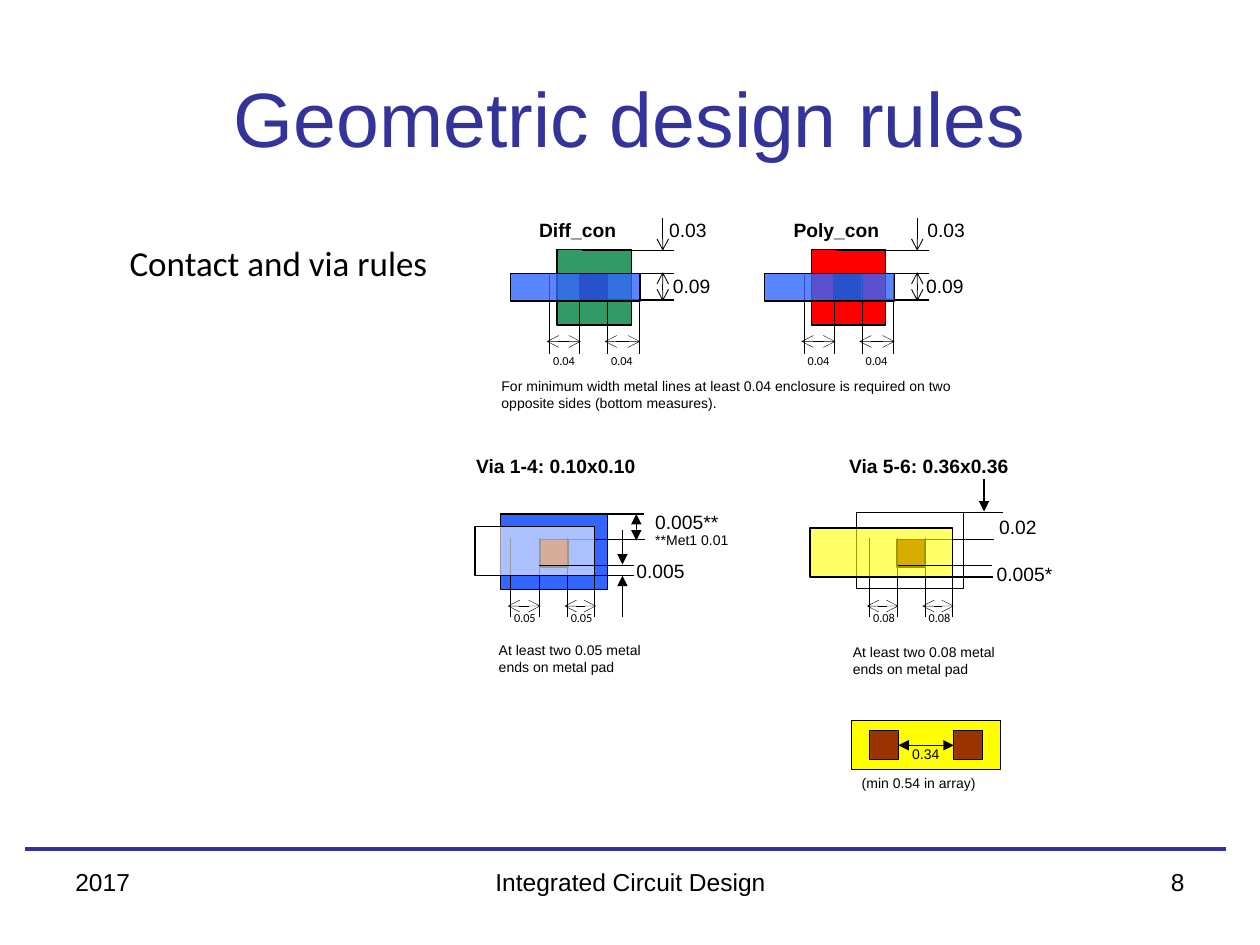
"""Build a slide on the geometric design rules for contacts and vias."""
from lxml.etree import SubElement
from pptx import Presentation
from pptx.dml.color import RGBColor
from pptx.enum.shapes import MSO_CONNECTOR as Connector, MSO_SHAPE as Shape
from pptx.enum.text import MSO_ANCHOR as Anchor, PP_ALIGN as Align
from pptx.oxml.ns import qn
from pptx.util import Inches, Pt

COLORS = {
    "black": "000000", "white": "FFFFFF", "navy": "333399", "green": "339966",
    "red": "FF0000", "blue": "3366FF", "yellow": "FFFF00", "brown": "993300",
}
DEFAULT, NARROW, TINY, FLUSH = (0.1, 0.05), (0.02, 0.05), (0.02, 0.01), (0, 0.05)

FRAME_TEXTS = [
    ("2017", (0.5, 6.83, 2.33, 0.52), Align.LEFT),
    ("Integrated Circuit Design", (3.42, 6.83, 3.17, 0.52), Align.CENTER),
    ("8", (7.17, 6.83, 2.33, 0.52), Align.RIGHT),
]
CONTACTS = [
    {"name": "Diff_con", "left": 4.42, "fill": "green", "outer_label": 5.29, "inner_label": 5.32},
    {"name": "Poly_con", "left": 6.44, "fill": "red", "outer_label": 7.34, "inner_label": 7.33},
]
CONTACT_NOTE = ("For minimum width metal lines at least 0.04 enclosure is required "
                "on two opposite sides (bottom measures).")
VIAS = [
    {"title": "Via 1-4: 0.10x0.10", "title_box": (3.68, 3.56, 1.63, 0.42),
     "pad": (3.97, 4.08, 0.85, 0.6), "pad_fill": "blue",
     "metal": (3.77, 4.18, 0.95, 0.39), "metal_fill": "white",
     "cut": 4.29, "ticks": (4.05, 4.28, 4.5, 4.72), "enclosure": "0.05",
     "top_lines": [(4.36, 4.08, 5.11), (4.38, 4.28, 5.12)],
     "low_lines": [(4.28, 4.49, 5.03), (4.28, 4.57, 5.03)], "low_width": 0.5,
     "labels": [(["0.005**"], (5.18, 4, 0.8, 0.3), 11, NARROW),
                (["**Met1 0.01"], (5.18, 4.17, 0.8, 0.3), 8, NARROW),
                (["0.005"], (5.03, 4.43, 0.48, 0.37), 11, TINY)],
     "arrows": [((5.05, 4.08), (5.05, 4.29), True), ((4.94, 4.9), (4.94, 4.57), False),
                ((4.94, 4.21), (4.94, 4.48), False)],
     "note_box": (3.86, 5.04, 1.68, 0.51)},
    {"title": "Via 5-6: 0.36x0.36", "title_box": (6.64, 3.56, 1.63, 0.42),
     "pad": (6.8, 4.07, 0.85, 0.6), "pad_fill": "white",
     "metal": (6.43, 4.19, 1.13, 0.39), "metal_fill": "yellow",
     "cut": 7.12, "ticks": (6.9, 7.12, 7.34, 7.56), "enclosure": "0.08",
     "top_lines": [(7.21, 4.07, 7.96), (7.14, 4.28, 7.89)],
     "low_lines": [(7.13, 4.49, 7.87), (7.13, 4.58, 7.88)], "low_width": 0.75,
     "labels": [(["0.02"], (7.91, 4.04, 0.52, 0.29), 11, NARROW),
                (["0.005*"], (7.89, 4.45, 0.8, 0.22), 11, TINY)],
     "arrows": [((7.81, 3.8), (7.81, 4.06), False)],
     "note_box": (6.67, 5.06, 1.68, 0.51)},
]

deck = Presentation()
deck.slide_width, deck.slide_height = Inches(10), Inches(7.5)
page = deck.slides.add_slide(deck.slide_layouts[6])


def rgb(name):
    return RGBColor.from_string(COLORS[name])


def add_text(lines, place, size, inset=DEFAULT, font="Arial", color="black",
             bold=False, align=Align.LEFT, anchor=Anchor.TOP):
    box = page.shapes.add_textbox(*map(Inches, place))
    frame = box.text_frame
    frame.word_wrap = True
    frame.vertical_anchor = anchor
    frame.margin_left = frame.margin_right = Inches(inset[0])
    frame.margin_top = frame.margin_bottom = Inches(inset[1])
    para = frame.paragraphs[0]
    para.text = "\v".join(lines)
    para.alignment = align
    for span in para.runs:
        span.font.size, span.font.name, span.font.bold = Pt(size), font, bold
        span.font.color.rgb = rgb(color)
    return box


def add_rect(place, fill, opacity=100):
    box = page.shapes.add_shape(Shape.RECTANGLE, *map(Inches, place))
    box.shadow.inherit = False
    box.fill.solid()
    box.fill.fore_color.rgb = rgb(fill)
    box.line.color.rgb = rgb("black")
    box.line.width = Pt(0.75)
    if opacity < 100:
        color = box.fill._xPr.find(qn("a:solidFill"))[0]
        SubElement(color, qn("a:alpha"), val=str(opacity * 1000))
    return box


def add_line(start, end, width=0.75, head=None, tail=None, color="black"):
    line = page.shapes.add_connector(Connector.STRAIGHT, *map(Inches, (*start, *end)))
    line.line.color.rgb = rgb(color)
    line.line.width = Pt(width)
    outline = line.line._get_or_add_ln()
    for tag, kind in (("a:headEnd", head), ("a:tailEnd", tail)):
        if kind:
            SubElement(outline, qn(tag), type=kind)
    SubElement(line._element.spPr, qn("a:effectLst"))
    return line


def add_enclosure(ticks, top, bottom, arrow_y, label_y, label):
    for x in ticks:
        add_line((x, top), (x, bottom), 0.25)
    for left, right in (ticks[:2], ticks[2:]):
        add_line((right + 0.01, arrow_y), (left - 0.02, arrow_y), 0.25, "arrow", "arrow")
        add_text([label], (left + 0.01, label_y, 0.32, 0.21), 7, TINY, "Calibri")


def add_contact(contact):
    left = contact["left"]
    arrow_x = left + 0.84
    add_rect((left, 1.98, 0.59, 0.6), contact["fill"])
    add_rect((left + 0.18, 2.17, 0.21, 0.22), "black")
    add_text([contact["name"]], (left - 0.24, 1.68, 1.1, 0.42), 11, bold=True)
    add_text(["0.03"], (contact["outer_label"], 1.68, 0.55, 0.4), 11, NARROW)
    add_text(["0.09"], (contact["inner_label"], 2.13, 0.53, 0.39), 11, NARROW)
    for y in (1.99, 2.17, 2.38):
        add_line((left + 0.2, y), (left + 0.93, y))
    add_line((arrow_x, 1.73), (arrow_x, 1.99), 0.5, tail="arrow")
    add_line((arrow_x, 2.39), (arrow_x, 2.16), 0.5, "arrow", "arrow")
    ticks = [left + shift for shift in (-0.06, 0.18, 0.4, 0.65)]
    add_enclosure(ticks, 2.18, 2.81, 2.71, 2.79, "0.04")
    add_rect((left - 0.37, 2.17, 1.03, 0.22), "blue", 80)


def add_via(via):
    add_text([via["title"]], via["title_box"], 11, bold=True)
    (outer, inner) = via["top_lines"]
    add_line(outer[:2], (outer[2], outer[1]))
    add_rect(via["pad"], via["pad_fill"])
    add_rect((via["cut"], 4.28, 0.22, 0.22), "brown")
    add_line(inner[:2], (inner[2], inner[1]))
    add_enclosure(via["ticks"], 4.27, 4.9, 4.81, 4.83, via["enclosure"])
    add_rect(via["metal"], via["metal_fill"], 60)
    for left, y, right in via["low_lines"]:
        add_line((left, y), (right, y), via["low_width"])
    for start, end, double in via["arrows"]:
        add_line(start, end, 0.75, "triangle" if double else None, "triangle")
    for label in via["labels"]:
        add_text(*label)
    note = [f"At least two {via['enclosure']} metal ", "ends on metal pad"]
    add_text(note, via["note_box"], 8)


def add_array():
    add_rect((6.76, 5.72, 1.18, 0.39), "yellow")
    first, second = [add_rect((x, 5.8, 0.23, 0.23), "brown") for x in (6.9, 7.57)]
    spacing = add_line((7.57, 5.91), (7.13, 5.91), 0.75, "triangle", "triangle")
    spacing.begin_connect(second, 1)
    spacing.end_connect(first, 3)
    add_text(["0.34"], (7.22, 5.87, 0.67, 0.39), 8, NARROW)
    add_text(["(min 0.54 in array)"], (6.74, 6.1, 1.85, 0.32), 8)


add_line((0.2, 6.74), (9.73, 6.74), 2.25, color="navy")
add_text(["Geometric design rules"], (0.5, 0.3, 9, 1.25), 44, color="navy",
         align=Align.CENTER, anchor=Anchor.MIDDLE)
for text, place, align in FRAME_TEXTS:
    add_text([text], place, 14, align=align)
add_text(["Contact and via rules"], (0.93, 1.87, 2.71, 0.4), 20, font="Calibri")
for contact in CONTACTS:
    add_contact(contact)
add_text([CONTACT_NOTE], (3.98, 2.95, 3.76, 0.61), 8, FLUSH)
for via in VIAS:
    add_via(via)
add_array()
deck.save("out.pptx")
